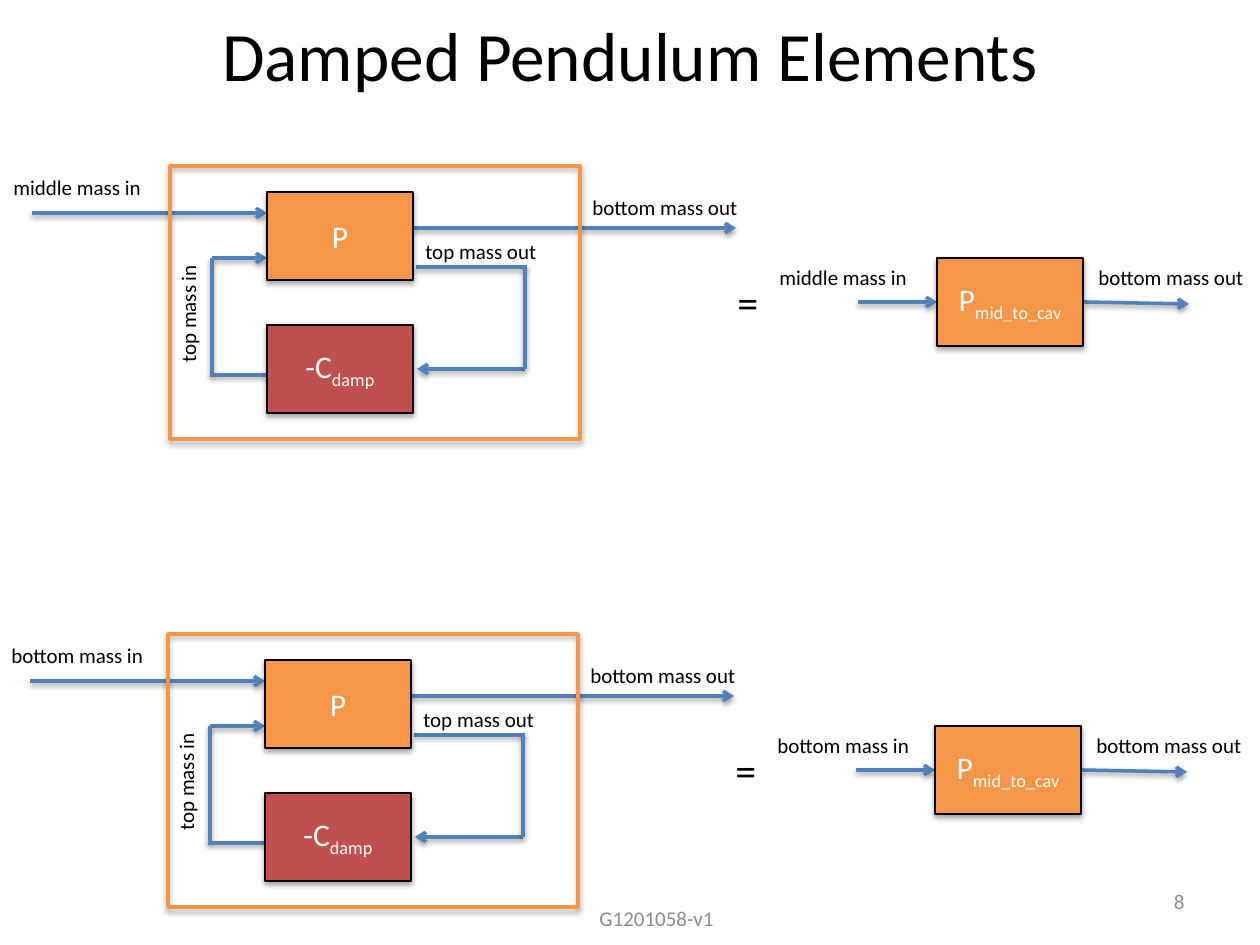
from lxml import etree
from pptx import Presentation
from pptx import util as u
from pptx.dml.color import RGBColor
from pptx.enum import shapes, text
from pptx.oxml import ns

SCALE = 914400 / 126
FONT = "Calibri"
COLORS = {
    "blue": "4F81BD", "orange": "F79646", "red": "C0504D",
    "black": "000000", "white": "FFFFFF", "grey": "8C8C8C",
}

DIAGRAMS = [
    {"offset": (0, 0), "input": "middle mass in"},
    {"offset": (-2, 468), "input": "bottom mass in"},
]
LINES = [
    ((32, 213), (267, 213), True),
    ((525, 369), (417, 369), True),
    ((413, 228), (736, 228), True),
    ((212, 258), (267, 258), True),
    ((212, 258), (212, 375), False),
    ((210, 375), (272, 375), False),
    ((416, 267), (527, 267), False),
    ((525, 266), (525, 369), False),
    ((1084, 302), (1189, 304), True),
    ((858, 302), (937, 302), True),
]
BOX_SIZE = (146, 88)
BOXES = [
    ((267, 192), "orange", "P", ""),
    ((267, 325), "red", "-C", "damp"),
    ((937, 258), "orange", "P", "mid_to_cav"),
]
FRAME = (170, 166, 410, 273)
LABELS = [
    ("top mass out", (413, 232, 144, 38), {}),
    ("top mass in", (118, 286, 140, 38), {"rotation": 270}),
    ("bottom mass out", (580, 188, 192, 38), {}),
    ("bottom mass out", (1086, 258, 176, 38), {}),
    ("=", (725, 270, 47, 63), {"size": 24, "wrap": False}),
]
INPUT_LABELS = [(1, 168, 163, 38), (767, 258, 163, 38)]
MIDDLE = {"anchor": text.MSO_ANCHOR.MIDDLE, "fit": text.MSO_AUTO_SIZE.NONE}
CENTER = {**MIDDLE, "align": text.PP_ALIGN.CENTER}
PAGE_TEXTS = [
    ("Damped Pendulum Elements", (63, 3, 1134, 102), {**CENTER, "size": 39.6}),
    ("G1201058-v1", (457, 893, 399, 50), {**CENTER, "color": "grey"}),
    ("8", (903, 876, 294, 50),
     {**MIDDLE, "color": "grey", "align": text.PP_ALIGN.RIGHT}),
]


def px(*values):
    return [u.Emu(round(v * SCALE)) for v in values]


def rgb(name):
    return RGBColor.from_string(COLORS[name])


def add_run(p, words, size, color):
    r = p.add_run()
    r.text = words
    for name, value in {"name": FONT, "size": u.Pt(size)}.items():
        setattr(r.font, name, value)
    r.font.color.rgb = rgb(color)
    return r


def style_line(s, color, width):
    s.line.color.rgb = rgb(color)
    s.line.width = u.Pt(width)


def add_shadow(s, distance, alpha):
    effects = etree.SubElement(s.element.spPr, ns.qn("a:effectLst"))
    shadow = etree.SubElement(effects, ns.qn("a:outerShdw"), blurRad="40000",
                              dist=str(distance), dir="5400000", rotWithShape="0")
    color = etree.SubElement(shadow, ns.qn("a:srgbClr"), val=COLORS["black"])
    etree.SubElement(color, ns.qn("a:alpha"), val=str(alpha * 1000))


def add_line(slide, start, end, arrow):
    s = slide.shapes.add_connector(shapes.MSO_CONNECTOR.STRAIGHT, *px(*start, *end))
    style_line(s, "blue", 2)
    if arrow:
        ln = s.element.spPr.find(ns.qn("a:ln"))
        etree.SubElement(ln, ns.qn("a:tailEnd"), type="arrow")
    add_shadow(s, 20000, 38)


def add_rect(slide, at, fill, line, width):
    s = slide.shapes.add_shape(shapes.MSO_SHAPE.RECTANGLE, *px(*at))
    if fill:
        s.fill.solid()
        s.fill.fore_color.rgb = rgb(fill)
    else:
        s.fill.background()
    style_line(s, line, width)
    add_shadow(s, 23000, 35)
    return s


def add_box(slide, at, fill, name, subscript):
    s = add_rect(slide, (*at, *BOX_SIZE), fill, "black", 0.75)
    s.text_frame.vertical_anchor = text.MSO_ANCHOR.MIDDLE
    p = s.text_frame.paragraphs[0]
    p.alignment = text.PP_ALIGN.CENTER
    add_run(p, name, 18, "white")
    if subscript:
        r = add_run(p, subscript, 18, "white")
        r.font._element.set("baseline", "-25000")


def add_label(slide, words, at, size=12, color="black", rotation=0, wrap=True,
              align=text.PP_ALIGN.LEFT, anchor=text.MSO_ANCHOR.TOP,
              fit=text.MSO_AUTO_SIZE.SHAPE_TO_FIT_TEXT):
    s = slide.shapes.add_textbox(*px(*at))
    s.rotation = rotation
    tf = s.text_frame
    settings = {"word_wrap": wrap, "auto_size": fit, "vertical_anchor": anchor}
    for name, value in settings.items():
        setattr(tf, name, value)
    p = tf.paragraphs[0]
    p.alignment = align
    add_run(p, words, size, color)


def add_diagram(slide, offset, input_name):
    dx, dy = offset

    def move(x, y, *size):
        return (x + dx, y + dy, *size)

    for start, end, arrow in LINES:
        add_line(slide, move(*start), move(*end), arrow)
    for at, *box in BOXES:
        add_box(slide, move(*at), *box)
    add_rect(slide, move(*FRAME), None, "orange", 2)
    for words, at, style in LABELS + [(input_name, at, {}) for at in INPUT_LABELS]:
        add_label(slide, words, move(*at), **style)


def main():
    prs = Presentation()
    prs.slide_width, prs.slide_height = px(1260, 945)
    slide = prs.slides.add_slide(prs.slide_layouts[6])
    for diagram in DIAGRAMS:
        add_diagram(slide, diagram["offset"], diagram["input"])
    for words, at, style in PAGE_TEXTS:
        add_label(slide, words, at, **style)
    prs.save("out.pptx")


if __name__ == "__main__":
    main()
